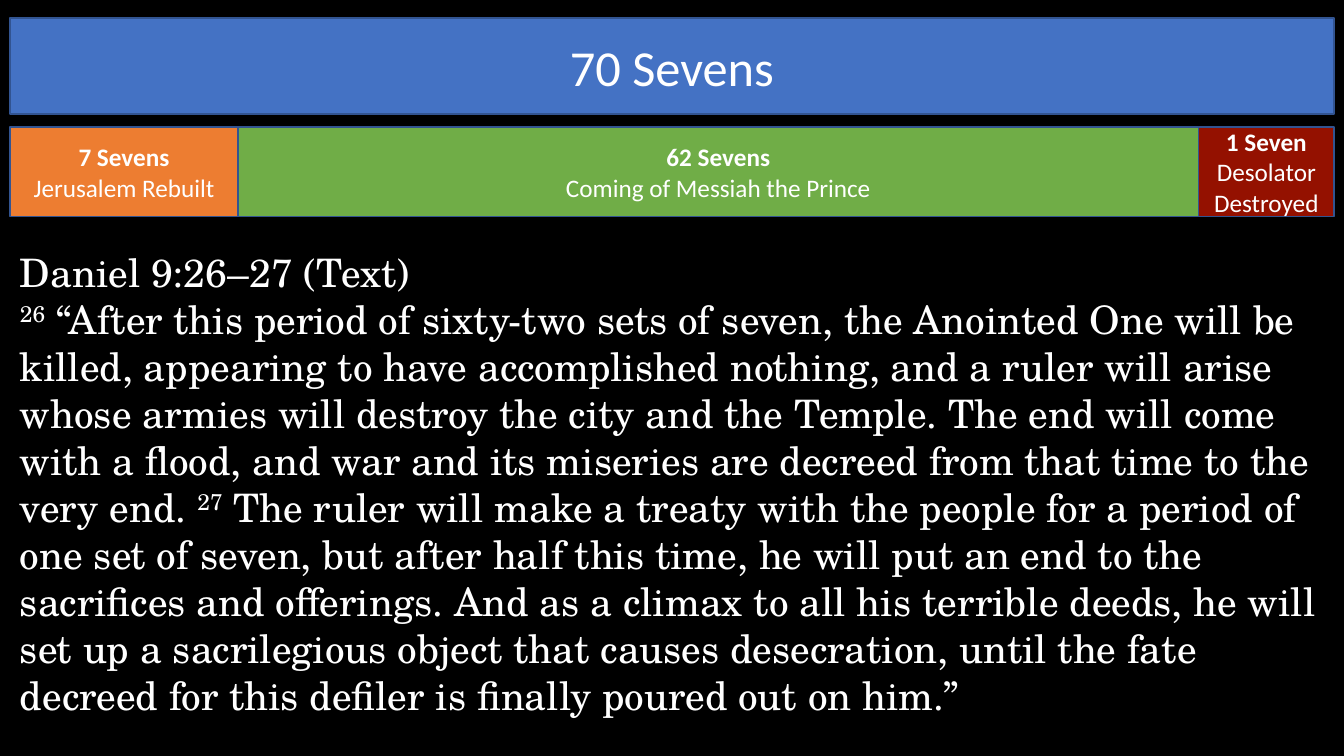
import pptx
import pptx.dml.color
import pptx.enum.shapes
import pptx.enum.text
import pptx.util
from pptx.dml.color import RGBColor
from pptx.util import Inches

BLACK = RGBColor(0x00, 0x00, 0x00)
WHITE = RGBColor(0xFF, 0xFF, 0xFF)
BLUE = RGBColor(0x44, 0x72, 0xC4)
OUTLINE = RGBColor(0x32, 0x54, 0x91)
ORANGE = RGBColor(0xED, 0x7D, 0x31)
GREEN = RGBColor(0x70, 0xAD, 0x47)
DARK_RED = RGBColor(0x94, 0x11, 0x00)

LEFT, WIDTH = 0.1, 13.13
PERIOD_TOP, PERIOD_HEIGHT = 1.26, 0.89

# Width, colour, length and event of each period, in order of time
PERIODS = [
    (2.26, ORANGE, "7 Sevens", "Jerusalem Rebuilt"),
    (9.53, GREEN, "62 Sevens", "Coming of Messiah the Prince"),
    (1.34, DARK_RED, "1 Seven", "Desolator Destroyed"),
]

REFERENCE = "Daniel 9:26–27 (Text)"
VERSES = [
    ("26", " “After this period of sixty-two sets of seven, the Anointed One "
           "will be killed, appearing to have accomplished nothing, and a ruler "
           "will arise whose armies will destroy the city and the Temple. The "
           "end will come with a flood, and war and its miseries are decreed "
           "from that time to the very end. "),
    ("27", " The ruler will make a treaty with the people for a period of one "
           "set of seven, but after half this time, he will put an end to the "
           "sacrifices and offerings. And as a climax to all his terrible "
           "deeds, he will set up a sacrilegious object that causes "
           "desecration, until the fate decreed for this defiler is finally "
           "poured out on him.”"),
]


def format_paragraph(paragraph, size, font_name, bold=False, align=None):
    paragraph.font.size = pptx.util.Pt(size)
    paragraph.font.name = font_name
    paragraph.font.bold = bold
    paragraph.font.color.rgb = WHITE
    paragraph.alignment = align


def format_bar(bar, colour, lines, size):
    """Fill and outline a bar; lines holds (text, bold) pairs."""
    bar.fill.solid()
    bar.fill.fore_color.rgb = colour
    bar.line.color.rgb = OUTLINE
    bar.line.width = pptx.util.Pt(1)
    frame = bar.text_frame
    frame.word_wrap = True
    frame.auto_size = pptx.enum.text.MSO_AUTO_SIZE.NONE
    frame.vertical_anchor = pptx.enum.text.MSO_ANCHOR.MIDDLE
    frame.text = "\n".join(text for text, _ in lines)
    for paragraph, (_, bold) in zip(frame.paragraphs, lines):
        format_paragraph(paragraph, size, "Calibri", bold,
                         pptx.enum.text.PP_ALIGN.CENTER)


def add_title(slide):
    title = slide.shapes.title
    title.left, title.top = Inches(LEFT), Inches(0.18)
    title.width, title.height = Inches(WIDTH), Inches(0.95)
    format_bar(title, BLUE, [("70 Sevens", False)], 36)


def add_period(slide, left, width, colour, length, event):
    period = slide.shapes.add_shape(
        pptx.enum.shapes.MSO_SHAPE.RECTANGLE, Inches(left), Inches(PERIOD_TOP),
        Inches(width), Inches(PERIOD_HEIGHT))
    period.shadow.inherit = False
    format_bar(period, colour, [(length, True), (event, False)], 18)


def add_passage(slide):
    passage = slide.shapes.add_textbox(
        Inches(LEFT), Inches(2.41), Inches(WIDTH), Inches(4.81))
    frame = passage.text_frame
    frame.word_wrap = True
    frame.auto_size = pptx.enum.text.MSO_AUTO_SIZE.SHAPE_TO_FIT_TEXT
    frame.text = REFERENCE
    verses = frame.add_paragraph()
    for number, words in VERSES:
        verse_number = verses.add_run()
        verse_number.text = number
        verse_number._r.get_or_add_rPr().set("baseline", "30000")
        verses.add_run().text = words
    for paragraph in frame.paragraphs:
        format_paragraph(paragraph, 28, "TeX Gyre Schola")


def main():
    deck = pptx.Presentation()
    deck.slide_width, deck.slide_height = Inches(13.33), Inches(7.5)
    slide = deck.slides.add_slide(deck.slide_layouts.get_by_name("Title Only"))
    slide.background.fill.solid()
    slide.background.fill.fore_color.rgb = BLACK

    # Whole span, then its three periods end to end
    add_title(slide)
    left = LEFT
    for width, colour, length, event in PERIODS:
        add_period(slide, left, width, colour, length, event)
        left += width

    # Scripture passage
    add_passage(slide)
    deck.save("out.pptx")


if __name__ == "__main__":
    main()
